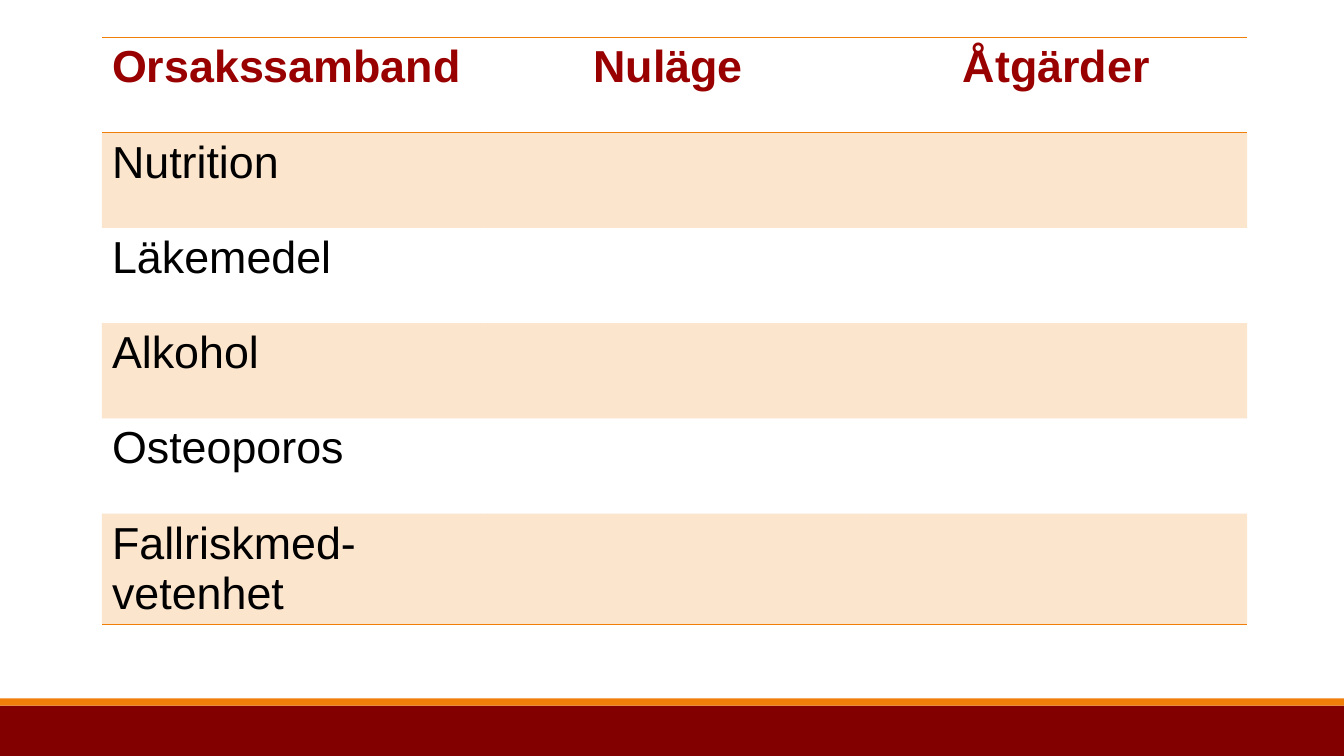
import pptx
import pptx.dml.color
import pptx.enum.shapes
import pptx.enum.text
import pptx.oxml
import pptx.oxml.ns
import pptx.util
from dataclasses import dataclass
from lxml import etree

Cm = pptx.util.Cm
RGB = pptx.dml.color.RGBColor.from_string
qn = pptx.oxml.ns.qn


@dataclass(frozen=True)
class Theme:
    font: str = "Arial"
    size: int = 32
    heading: str = "990000"
    text: str = "000000"
    accent: str = "F07F09"
    footer: str = "820000"
    band_alpha: int = 20000
    rule: float = 1


theme = Theme()
NO_STYLE = "{2D5ABB26-0587-4C30-8999-92F81FD0307C}"


def add_rule(cell, side):
    """Draw an accent line on one side of a cell."""
    ln = etree.SubElement(cell._tc.get_or_add_tcPr(), qn("a:" + side),
                          w=str(pptx.util.Pt(theme.rule)))
    fill = etree.SubElement(ln, qn("a:solidFill"))
    etree.SubElement(fill, qn("a:srgbClr"), val=theme.accent)


prs = pptx.Presentation()
prs.slide_width, prs.slide_height = Cm(33.87), Cm(19.05)
s = prs.slides.add_slide(prs.slide_layouts[6])

# Footer bars
for top, height, color in ((17.78, 1.27, theme.footer), (17.6, 0.18, theme.accent)):
    sp = s.shapes.add_shape(pptx.enum.shapes.MSO_SHAPE.RECTANGLE,
                            0, Cm(top), prs.slide_width, Cm(height))
    sp.shadow.inherit = False
    sp.fill.solid()
    sp.fill.fore_color.rgb = RGB(color)
    sp.line.fill.background()

# Table
rows = [
    ["Orsakssamband", "Nuläge ", "Åtgärder"],
    ["Nutrition", "", ""],
    ["Läkemedel", "", ""],
    ["Alkohol", "", ""],
    ["Osteoporos", "", ""],
    ["Fallriskmed-\nvetenhet", "", ""],
]
last = len(rows) - 1
frame = s.shapes.add_table(len(rows), 3, Cm(2.57), Cm(0.94), Cm(28.86), Cm(14.4))
table = frame.table
table.first_row = table.horz_banding = False
table._tbl.tblPr.find(qn("a:tableStyleId")).text = NO_STYLE
for row in table.rows:
    row.height = Cm(2.4)

for i, texts in enumerate(rows):
    for j, text in enumerate(texts):
        cell = table.cell(i, j)

        # Rules around the heading and below the last row
        if i == 0:
            add_rule(cell, "lnT")
        if i in (0, last):
            add_rule(cell, "lnB")

        # Bands on every other row
        if i % 2:
            cell.fill.solid()
            cell.fill.fore_color.rgb = RGB(theme.accent)
            color = cell._tc.tcPr.find(qn("a:solidFill")).find(qn("a:srgbClr"))
            etree.SubElement(color, qn("a:alpha"), val=str(theme.band_alpha))
        else:
            cell.fill.background()

        # Text
        cell.text_frame.text = text
        for p in cell.text_frame.paragraphs:
            if i == 0 and j > 0:
                p.alignment = pptx.enum.text.PP_ALIGN.CENTER
            for r in p.runs:
                r.font.name = theme.font
                r.font.size = pptx.util.Pt(theme.size)
                r.font.bold = i == 0
                r.font.color.rgb = RGB(theme.text if i else theme.heading)

prs.save("out.pptx")
